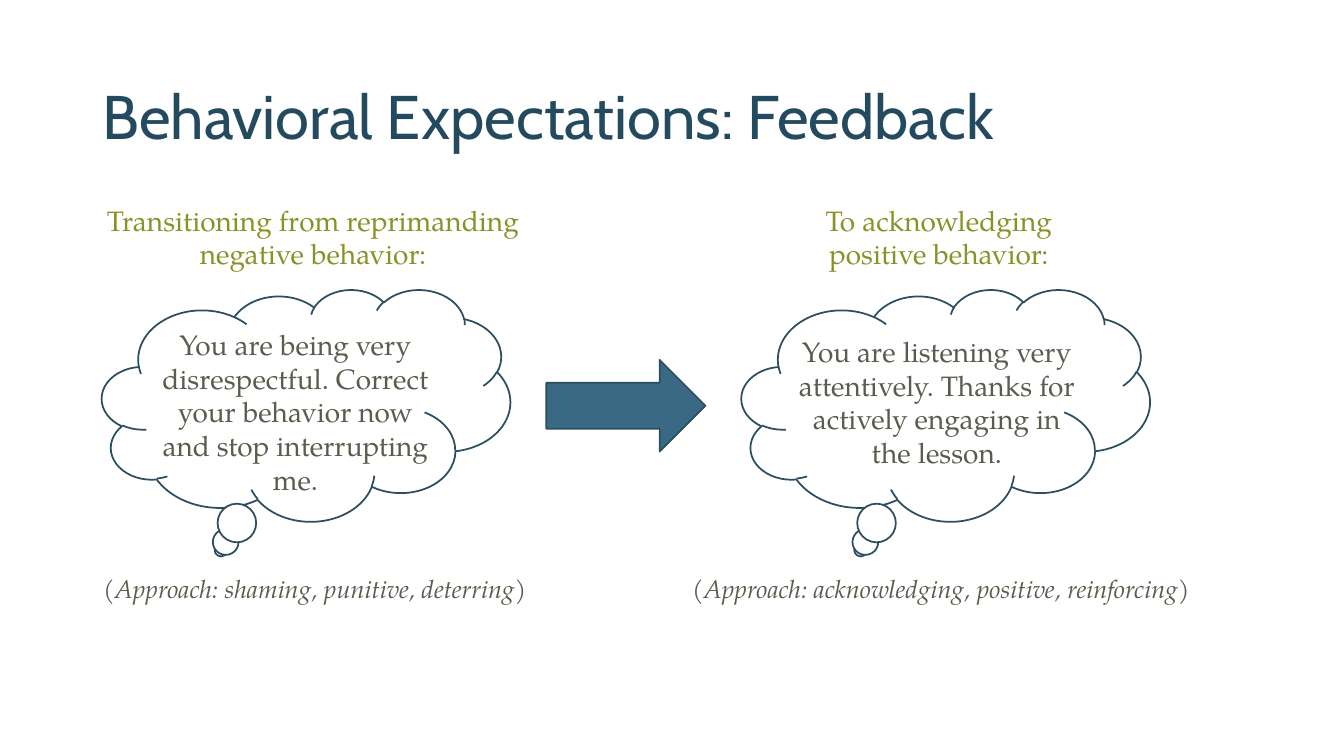
from collections import namedtuple

from pptx import Presentation
from pptx.dml.color import RGBColor
from pptx.enum.shapes import MSO_SHAPE
from pptx.enum.text import MSO_ANCHOR, PP_ALIGN
from pptx.util import Cm, Pt

CLOUD = MSO_SHAPE.CLOUD_CALLOUT
ARROW = MSO_SHAPE.RIGHT_ARROW
MIDDLE, TOP = MSO_ANCHOR.MIDDLE, MSO_ANCHOR.TOP
LEFT, CENTER = PP_ALIGN.LEFT, PP_ALIGN.CENTER

TITLE_FONT, BODY_FONT = "Cabin", "TeX Gyre Pagella"
NAVY, GREEN, GRAY = "244A5F", "899226", "5D5B4E"
WHITE, BLUE, OUTLINE = "FFFFFF", "3A6983", "2B4E61"

# All lengths are in centimetres
Box = namedtuple("Box", "left top width height")


def color(code):
    return RGBColor.from_string(code)


def inside(box, left, top, width, height):
    """Return a box whose corner is measured from the corner of another."""
    return Box(box.left + left, box.top + top, width, height)


def add_text(page, box, text, size, tint, font=BODY_FONT, align=CENTER,
             anchor=TOP, wrap=True, italic=False):
    shape = page.shapes.add_textbox(*map(Cm, box))
    frame = shape.text_frame
    frame.word_wrap = wrap
    frame.vertical_anchor = anchor
    frame.text = text
    para = frame.paragraphs[0]
    para.alignment = align
    span = para.runs[0]
    span.font.name = font
    span.font.size = Pt(size)
    span.font.italic = italic
    span.font.color.rgb = color(tint)
    return para


def add_figure(page, kind, box, fill):
    shape = page.shapes.add_shape(kind, *map(Cm, box))
    shape.shadow.inherit = False
    shape.fill.solid()
    shape.fill.fore_color.rgb = color(fill)
    shape.line.color.rgb = color(OUTLINE)
    shape.line.width = Pt(1.25)


def add_title(page, box):
    para = add_text(page, box, "Behavioral Expectations: Feedback", 44, NAVY,
                    TITLE_FONT, LEFT, MIDDLE)
    para.line_spacing = 0.9


def add_feedback(page, box, heading, speech, approach):
    """Each text comes with its own box, measured from the panel."""
    # Heading
    text, place = heading
    add_text(page, inside(box, *place), text, 20, GREEN)
    # Thought cloud and its words
    add_figure(page, CLOUD, inside(box, 0, 2.29, box.width, 5.84), WHITE)
    text, place = speech
    add_text(page, inside(box, *place), text, 20, GRAY)
    # Approach
    text, place = approach
    add_text(page, inside(box, *place), text, 18, GRAY,
             wrap=False, italic=True)


def main():
    deck = Presentation()
    deck.slide_width, deck.slide_height = Cm(33.87), Cm(19.05)
    page = deck.slides.add_slide(deck.slide_layouts[6])

    add_title(page, Box(2.33, 1.17, 29.21, 3.68))

    # From negative feedback
    add_feedback(
        page, Box(2.57, 5, 10.29, 10.35),
        ("Transitioning from reprimanding negative behavior:",
         (-0.23, 0, 11.1, 1.96)),
        ("You are being very disrespectful. Correct your behavior now "
         "and stop interrupting me.", (1.19, 3.13, 7.37, 4.52)),
        ("(Approach: shaming, punitive, deterring)",
         (-0.3, 9.33, 11.33, 1.02)))

    # To positive feedback
    add_feedback(
        page, Box(18.69, 5, 10.29, 10.35),
        ("To acknowledging positive behavior:", (1.02, 0, 7.9, 1.96)),
        ("You are listening very attentively. Thanks for actively engaging "
         "in the lesson.", (1.02, 3.31, 7.8, 3.68)),
        ("(Approach: acknowledging, positive, reinforcing)",
         (-1.54, 9.33, 13.13, 1.02)))

    # Transition arrow
    add_figure(page, ARROW, Box(13.77, 9.07, 4.01, 2.31), BLUE)

    deck.save("out.pptx")


if __name__ == "__main__":
    main()
